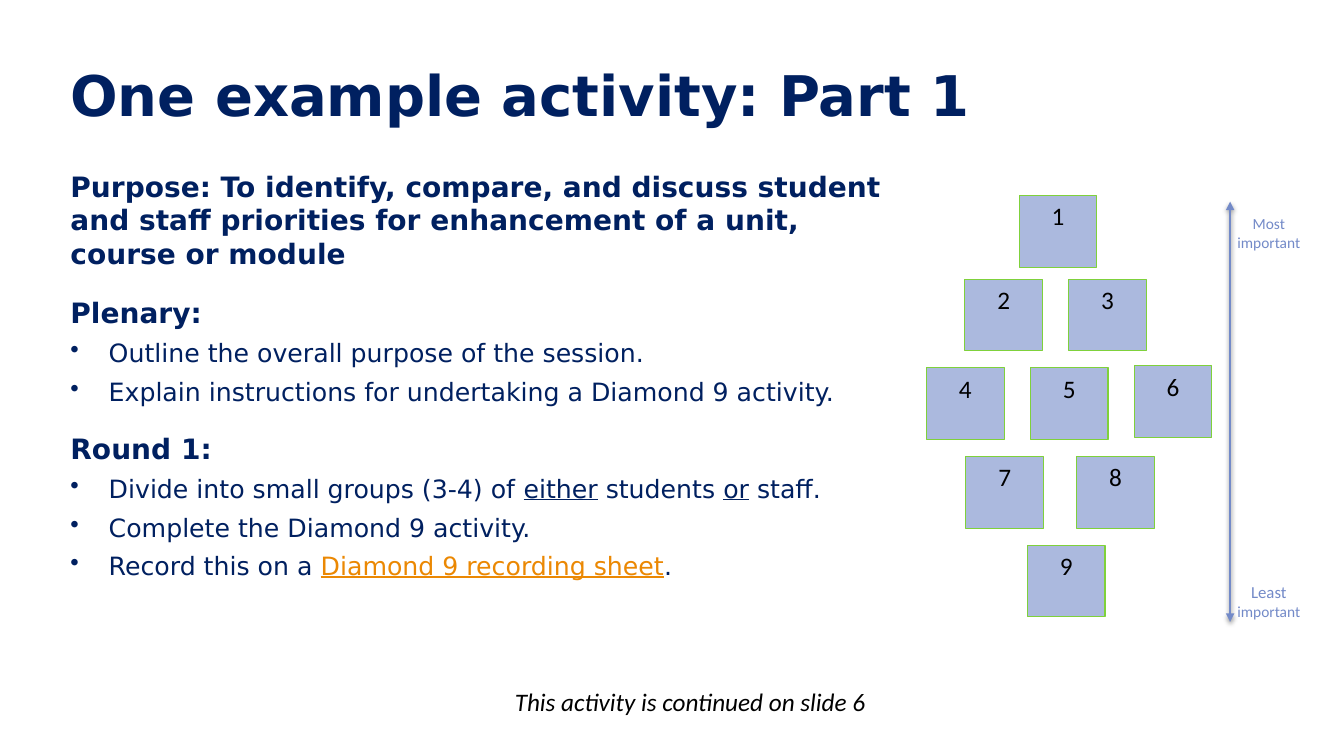
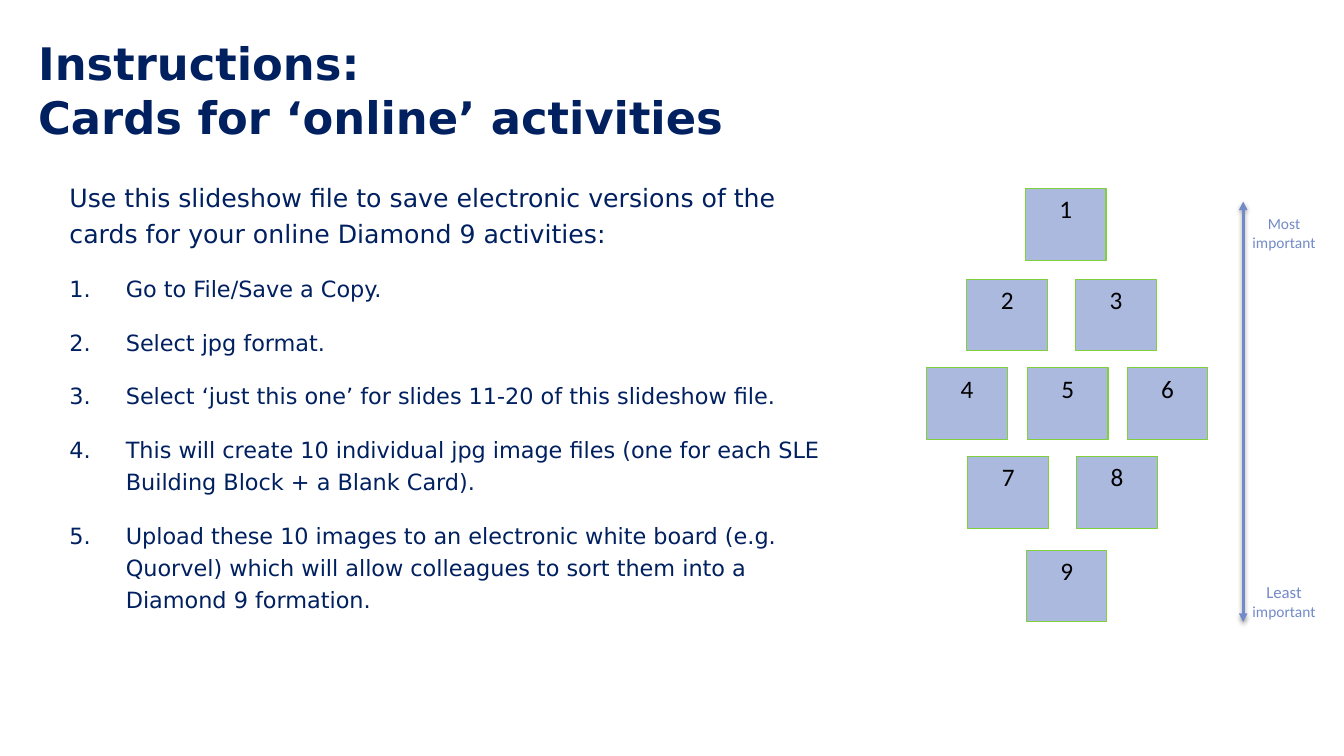
from lxml import etree
from pptx import Presentation
from pptx.dml.color import RGBColor
from pptx.enum.shapes import MSO_CONNECTOR, MSO_SHAPE
from pptx.enum.text import MSO_ANCHOR, PP_ALIGN
from pptx.oxml import parse_xml
from pptx.oxml.ns import qn
from pptx.util import Inches, Pt

NAVY, BLACK, ORANGE = "002060", "000000", "EB8803"
CARD_FILL, CARD_LINE, SCALE_BLUE = "ABB9DE", "7FD13B", "738AC8"
HEADING_FONT, LABEL_FONT = "DejaVu Sans", "Calibri"
CARD_HEIGHT = 0.71
BULLET = ("buChar", {"char": "•"})
NUMBER = ("buAutoNum", {"type": "arabicPeriod"})
ARROW_SHADOW = (
    '<a:effectLst xmlns:a="http://schemas.openxmlformats.org/drawingml/2006/main">'
    '<a:outerShdw blurRad="39370" dist="20320" dir="5400000" rotWithShape="0">'
    '<a:srgbClr val="000000"><a:alpha val="38000"/></a:srgbClr>'
    '</a:outerShdw></a:effectLst>'
)


def add_text_box(shapes, left, top, width, height, anchor=MSO_ANCHOR.TOP):
    """Add a wrapping text box and return its text frame."""
    frame = shapes.add_textbox(Inches(left), Inches(top), Inches(width), Inches(height)).text_frame
    frame.word_wrap = True
    frame.vertical_anchor = anchor
    return frame


def add_paragraph(frame, *runs, size, font=HEADING_FONT, color=NAVY, bold=False, italic=False,
                  align=PP_ALIGN.LEFT, before=0, after=0, spacing=None, marker=None, indent=0):
    """Fill the empty first paragraph or add one; a run is text or (text, overrides)."""
    paragraph = frame.paragraphs[0]
    if paragraph.runs:
        paragraph = frame.add_paragraph()
        paragraph.space_before = Pt(before)
    if marker:
        tag, attributes = marker
        properties = paragraph._p.get_or_add_pPr()
        properties.set("marL", str(Inches(indent)))
        properties.set("indent", str(-Inches(indent)))
        etree.SubElement(properties, qn("a:" + tag), attributes)
    paragraph.alignment = align
    paragraph.space_after = Pt(after)
    if spacing:
        paragraph.line_spacing = spacing
    for item in runs:
        text, changes = (item, {}) if isinstance(item, str) else item
        if text == "\n":
            paragraph.add_line_break()
            continue
        run = paragraph.add_run()
        run.text = text
        run.font.name = font
        run.font.size = Pt(changes.get("size", size))
        run.font.bold = bold
        run.font.italic = italic
        run.font.underline = changes.get("underline", False)
        run.font.color.rgb = RGBColor.from_string(changes.get("color", color))


presentation = Presentation()
presentation.slide_width = Inches(13.33)
presentation.slide_height = Inches(7.5)
blank_layout = presentation.slide_layouts[6]
activity_slide = presentation.slides.add_slide(blank_layout)
instructions_slide = presentation.slides.add_slide(blank_layout)

# Activity slide
title = add_text_box(activity_slide.shapes, 0.6, 0.21, 11.5, 1.45, MSO_ANCHOR.MIDDLE)
add_paragraph(title, "One example activity: Part 1", size=40, bold=True)

underlined = {"underline": True}
sections = [
    ("Purpose: To identify, compare, and discuss student and staff priorities "
     "for enhancement of a unit, course or module", []),
    ("Plenary:", [
        ["Outline the overall purpose of the session."],
        ["Explain instructions for undertaking a Diamond 9 activity."],
    ]),
    ("Round 1:", [
        ["Divide into small groups (3-4) of ", ("either", underlined), " students ",
         ("or", underlined), " staff."],
        ["Complete the Diamond 9 activity."],
        ["Record this on a ",
         ("Diamond 9 recording sheet", {"underline": True, "color": ORANGE}), "."],
    ]),
]
body = add_text_box(activity_slide.shapes, 0.6, 1.63, 8.49, 4.87)
for heading, bullets in sections:
    add_paragraph(body, heading, size=20, bold=True, before=12, after=6)
    for runs in bullets:
        add_paragraph(body, *runs, size=18, after=6, marker=BULLET, indent=0.38)

note = add_text_box(activity_slide.shapes, 3.5, 6.76, 6.69, 0.4)
add_paragraph(note, "This activity is continued on slide 6", size=18, font=LABEL_FONT,
              color=BLACK, italic=True, align=PP_ALIGN.CENTER)

# Instructions slide
title = add_text_box(instructions_slide.shapes, 0.28, 0.15, 9.67, 1.48, MSO_ANCHOR.MIDDLE)
add_paragraph(title, "Instructions:", "\n", "Cards for ‘online’ activities", size=32, bold=True)

steps = [
    "Go to File/Save a Copy.",
    "Select jpg format.",
    "Select ‘just this one’ for slides 11-20 of this slideshow file.",
    "This will create 10 individual jpg image files (one for each SLE Building Block "
    "+ a Blank Card).",
    "Upload these 10 images to an electronic white board (e.g. Quorvel) which will allow "
    "colleagues to sort them into a Diamond 9 formation.",
]
body = add_text_box(instructions_slide.shapes, 0.59, 1.7, 7.89, 4.72)
add_paragraph(body, "Use this slideshow file to save electronic versions of the cards "
              "for your online Diamond 9 activities:", size=18, after=12, spacing=1.2)
for step in steps:
    add_paragraph(body, step, size=16, before=3.2, after=12, spacing=1.2,
                  marker=NUMBER, indent=0.56)

# Diamond of nine cards with its importance scale: card width, arrow x,
# label width, and the left and top of cards 1 to 9
diamonds = [
    (activity_slide, 0.77, 12.2, 0.87,
     [(10.11, 1.94), (9.57, 2.77), (10.6, 2.77), (9.19, 3.65), (10.22, 3.65),
      (11.25, 3.63), (9.58, 4.53), (10.68, 4.53), (10.19, 5.41)]),
    (instructions_slide, 0.8, 12.33, 0.91,
     [(10.17, 1.87), (9.59, 2.77), (10.67, 2.77), (9.19, 3.65), (10.19, 3.65),
      (11.18, 3.65), (9.6, 4.53), (10.68, 4.53), (10.18, 5.46)]),
]
scale_labels = [
    (2.08, ["Most important"]),
    (5.72, [("Least ", {"size": 12}), "important"]),
]
for slide, card_width, arrow_x, label_width, card_positions in diamonds:
    shapes = slide.shapes.add_group_shape().shapes
    for number, (left, top) in enumerate(card_positions, start=1):
        card = shapes.add_shape(MSO_SHAPE.RECTANGLE, Inches(left), Inches(top),
                                Inches(card_width), Inches(CARD_HEIGHT))
        card.shadow.inherit = False
        card.fill.solid()
        card.fill.fore_color.rgb = RGBColor.from_string(CARD_FILL)
        card.line.color.rgb = RGBColor.from_string(CARD_LINE)
        card.line.width = Pt(0.75)
        card.text_frame.vertical_anchor = MSO_ANCHOR.TOP
        add_paragraph(card.text_frame, str(number), size=18, font=LABEL_FONT, color=BLACK,
                      align=PP_ALIGN.CENTER)

    arrow = shapes.add_connector(MSO_CONNECTOR.STRAIGHT, Inches(arrow_x), Inches(2),
                                 Inches(arrow_x), Inches(6.17))
    arrow.line.color.rgb = RGBColor.from_string(SCALE_BLUE)
    arrow.line.width = Pt(2)
    for end in ("headEnd", "tailEnd"):
        etree.SubElement(arrow.line._get_or_add_ln(), qn("a:" + end), {"type": "triangle"})
    arrow._element.spPr.append(parse_xml(ARROW_SHADOW))

    for top, runs in scale_labels:
        label = add_text_box(shapes, arrow_x - 0.05, top, label_width, 0.43)
        add_paragraph(label, *runs, size=11, font=LABEL_FONT, color=SCALE_BLUE,
                      align=PP_ALIGN.CENTER)

presentation.save("out.pptx")
